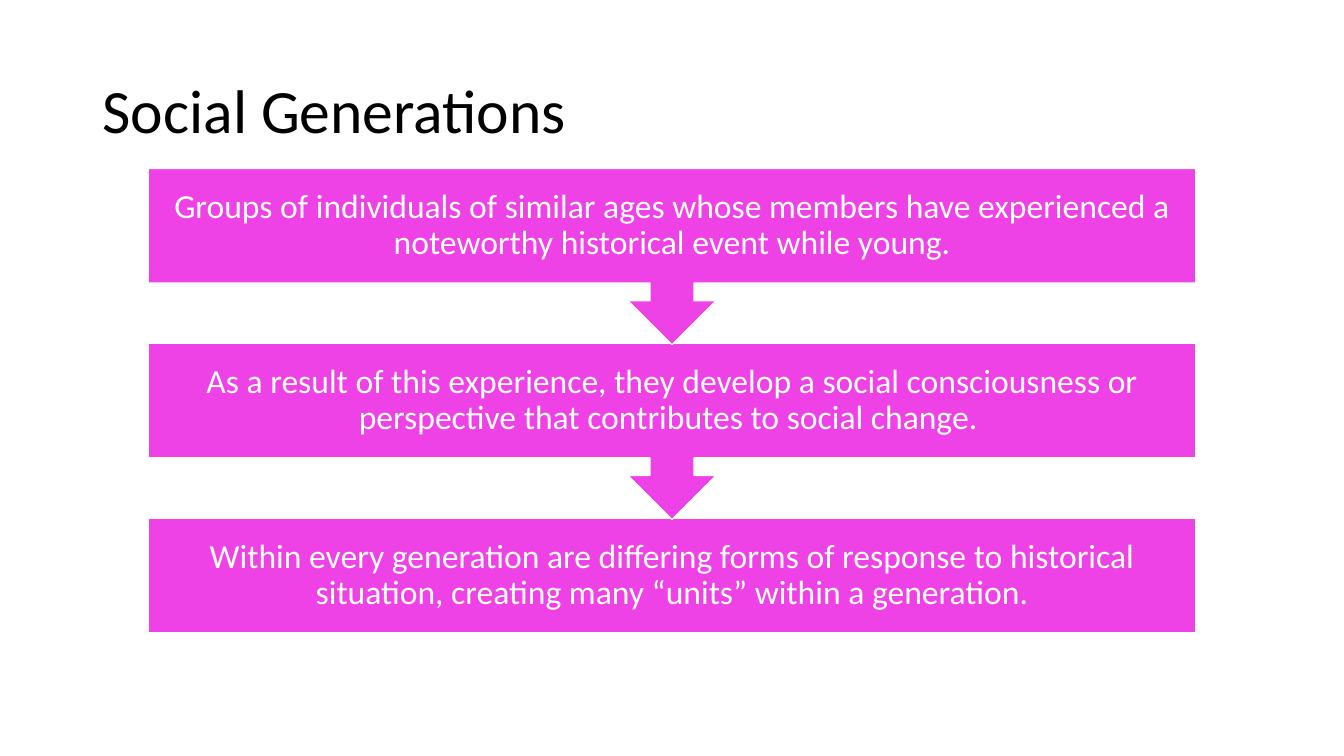
from dataclasses import dataclass

from pptx import Presentation
from pptx.dml.color import RGBColor
from pptx.enum.shapes import MSO_SHAPE
from pptx.enum.text import MSO_ANCHOR, PP_ALIGN
from pptx.util import Inches, Pt

RECT = MSO_SHAPE.RECTANGLE
CALLOUT = MSO_SHAPE.UP_ARROW_CALLOUT
MIDDLE = MSO_ANCHOR.MIDDLE
LEFT, CENTER = PP_ALIGN.LEFT, PP_ALIGN.CENTER

FONT = "Calibri"
PINK, WHITE, BLACK = "EE42E6", "FFFFFF", "000000"
STEP_LEFT, STEP_WIDTH = 1.47, 10.39
FIRST_TOP, PITCH = 1.67, 1.735
BODY_HEIGHT, CALLOUT_HEIGHT = 1.14, 1.75


@dataclass
class Step:
    text: str
    shape: MSO_SHAPE = CALLOUT
    height: float = CALLOUT_HEIGHT
    rotation: float = 180


STEPS = [
    Step("Groups of individuals of similar ages whose members have "
         "experienced a noteworthy historical event while young."),
    Step("As a result of this experience, they develop a social consciousness "
         "or perspective that contributes to social change. "),
    Step("Within every generation are differing forms of response to historical "
         "situation, creating many “units” within a generation.",
         RECT, BODY_HEIGHT, 0),
]


def rgb(color: str) -> RGBColor:
    return RGBColor.from_string(color)


def add_text(s, text: str, left: float, top: float, width: float, height: float,
             *, size: float, color: str, align=LEFT,
             inset_x: float = 0.1, inset_y: float = 0.05) -> None:
    tf = s.shapes.add_textbox(Inches(left), Inches(top),
                              Inches(width), Inches(height)).text_frame
    tf.word_wrap = True
    tf.vertical_anchor = MIDDLE
    tf.margin_left = tf.margin_right = Inches(inset_x)
    tf.margin_top = tf.margin_bottom = Inches(inset_y)
    p = tf.paragraphs[0]
    p.alignment = align
    p.line_spacing = 0.9
    r = p.add_run()
    r.text = text
    r.font.name = FONT
    r.font.size = Pt(size)
    r.font.color.rgb = rgb(color)


def add_step(s, step: Step, top: float) -> None:
    sp = s.shapes.add_shape(step.shape, Inches(STEP_LEFT), Inches(top),
                            Inches(STEP_WIDTH), Inches(step.height))
    sp.rotation = step.rotation
    sp.shadow.inherit = False
    sp.fill.solid()
    sp.fill.fore_color.rgb = rgb(PINK)
    sp.line.color.rgb = rgb(WHITE)
    sp.line.width = Pt(1)
    add_text(s, step.text, STEP_LEFT, top, STEP_WIDTH, BODY_HEIGHT, size=24,
             color=WHITE, align=CENTER, inset_x=0.19, inset_y=0.19)


def main() -> None:
    prs = Presentation()
    prs.slide_width, prs.slide_height = Inches(13.33), Inches(7.5)
    s = prs.slides.add_slide(prs.slide_layouts[6])
    add_text(s, "Social Generations", 0.92, 0.4, 11.5, 1.45, size=44, color=BLACK)
    # Bottom step first, so each arrow tip lies over the step below it
    for i, step in reversed(list(enumerate(STEPS))):
        add_step(s, step, FIRST_TOP + i * PITCH)
    prs.save("out.pptx")


if __name__ == "__main__":
    main()
